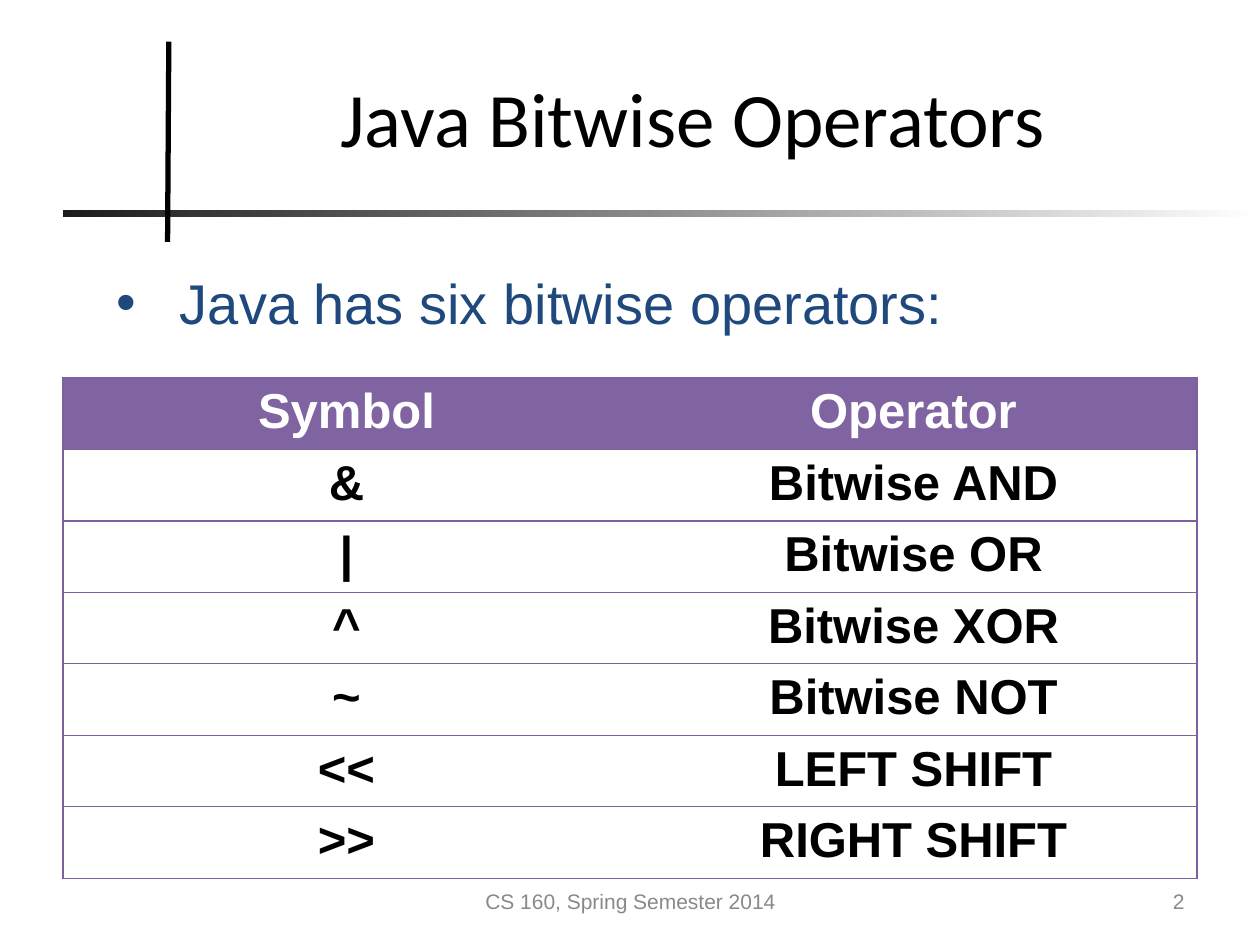
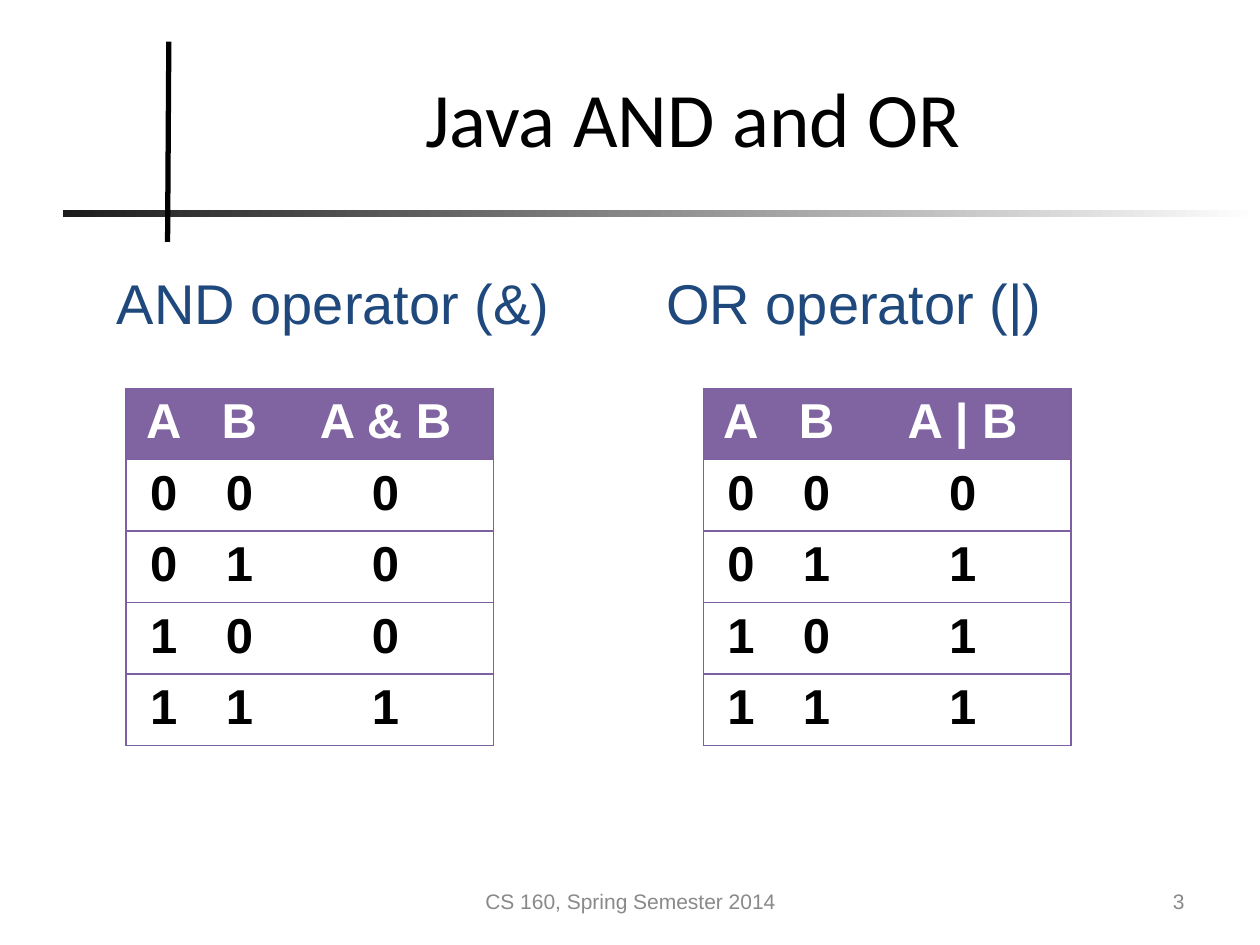
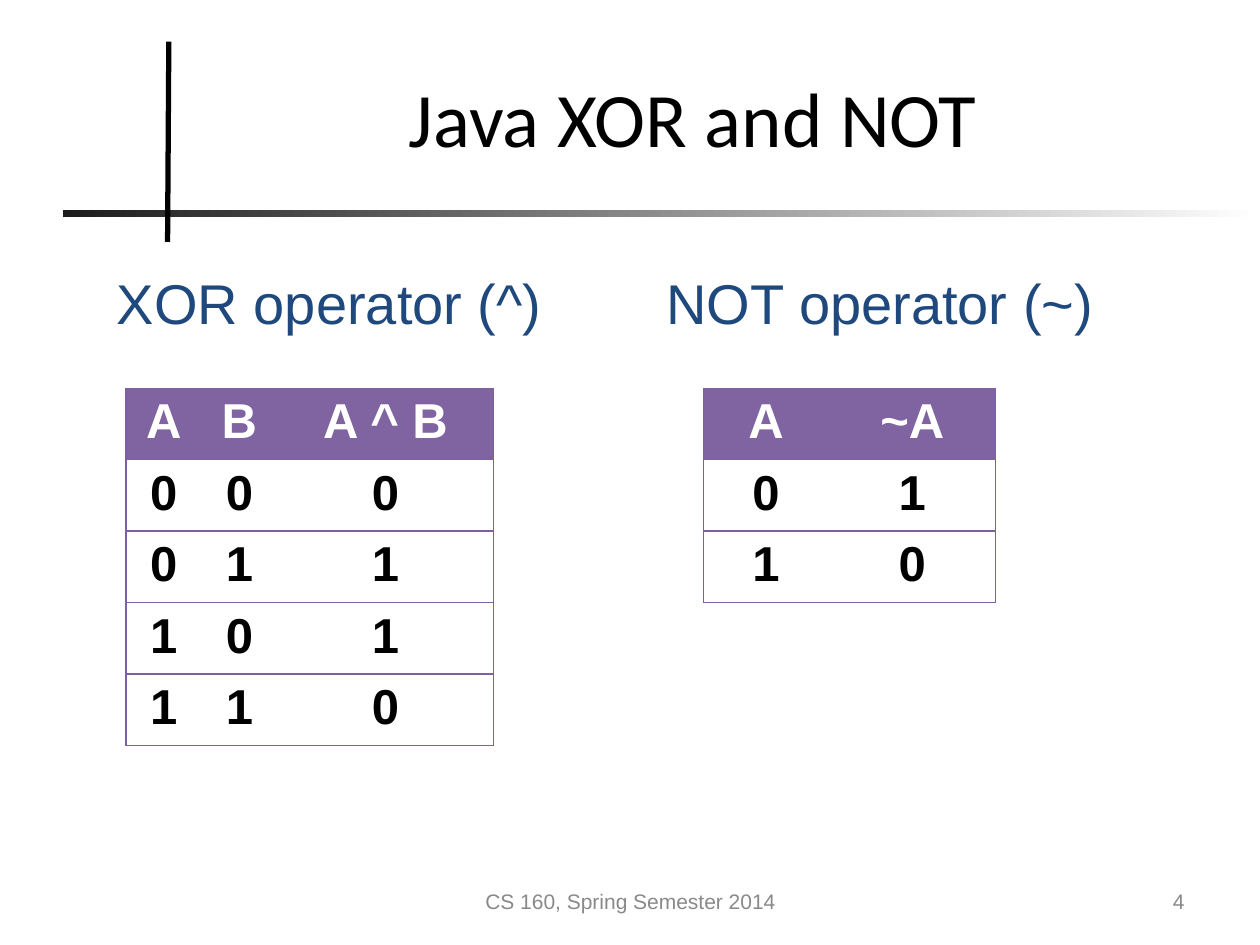
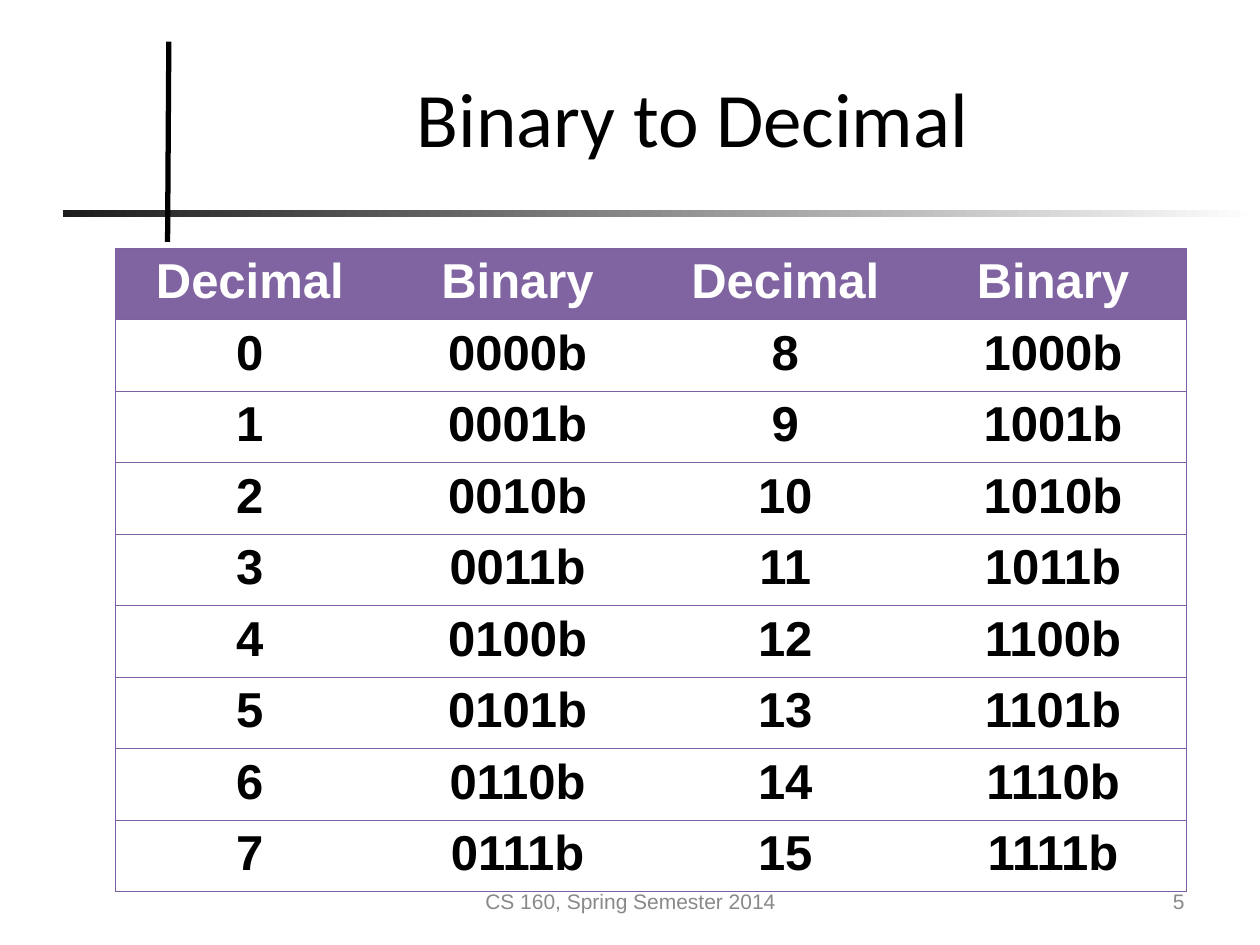
"""Build four slides on the Java bitwise operators."""
from dataclasses import dataclass
from typing import Any

from lxml.etree import SubElement
from pptx import Presentation
from pptx.dml.color import RGBColor
from pptx.enum.shapes import MSO_CONNECTOR, MSO_SHAPE
from pptx.enum.text import MSO_ANCHOR, MSO_AUTO_SIZE, PP_ALIGN
from pptx.oxml.ns import qn
from pptx.slide import Slide
from pptx.table import _Cell
from pptx.text.text import _Paragraph
from pptx.util import Inches, Pt

BLACK = RGBColor(0x00, 0x00, 0x00)
WHITE = RGBColor(0xFF, 0xFF, 0xFF)
CHARCOAL = RGBColor(0x1C, 0x1C, 0x1C)
GRAY = RGBColor(0x89, 0x89, 0x89)
NAVY = RGBColor(0x1F, 0x49, 0x7D)
HEADER_PURPLE = RGBColor(0x80, 0x64, 0xA2)
BORDER_PURPLE = RGBColor(0x7D, 0x60, 0xA0)

FOOTER = "CS 160, Spring Semester 2014"
FIRST_NUMBER = 2


@dataclass(frozen=True)
class TextStyle:
    """Font, colour and placement of a paragraph."""

    font: dict[str, Any]
    color: RGBColor
    alignment: PP_ALIGN = PP_ALIGN.LEFT


@dataclass(frozen=True)
class Box:
    """Place and size in inches."""

    left: float
    top: float
    width: float
    height: float

    def lengths(self) -> list[Inches]:
        """Give the four values as lengths."""
        return [Inches(value) for value in (self.left, self.top, self.width, self.height)]


@dataclass(frozen=True)
class Grid:
    """Table with a header row."""

    left: float
    top: float
    height: float
    columns: list[float]
    rows: list[list[str]]


@dataclass(frozen=True)
class Page:
    """Content of one slide."""

    title: str
    grids: list[Grid]
    heading: str = ""
    heading_width: float = 8.17
    bulleted: bool = False


TITLE_STYLE = TextStyle({"name": "Calibri", "size": Pt(44)}, BLACK, PP_ALIGN.CENTER)
HEADING_STYLE = TextStyle({"name": "Arial", "size": Pt(32)}, NAVY)
CELL_FONT = {"name": "Arial", "size": Pt(28), "bold": True}
HEADER_STYLE = TextStyle(CELL_FONT, WHITE, PP_ALIGN.CENTER)
BODY_STYLE = TextStyle(CELL_FONT, BLACK, PP_ALIGN.CENTER)
SMALL_FONT = {"name": "Arial", "size": Pt(12)}
FOOTER_STYLE = TextStyle(SMALL_FONT, GRAY, PP_ALIGN.CENTER)
NUMBER_STYLE = TextStyle(SMALL_FONT, GRAY, PP_ALIGN.RIGHT)


def style_paragraph(paragraph: _Paragraph, text: str, style: TextStyle) -> None:
    """Write text in the given style."""
    run = paragraph.add_run()
    run.text = text
    paragraph.alignment = style.alignment
    for name, value in style.font.items():
        setattr(run.font, name, value)
    run.font.color.rgb = style.color


def add_text(slide: Slide, box: Box, text: str, style: TextStyle,
             anchor: MSO_ANCHOR = MSO_ANCHOR.MIDDLE) -> _Paragraph:
    """Add a wrapped text box and return its paragraph."""
    frame = slide.shapes.add_textbox(*box.lengths()).text_frame
    frame.word_wrap = True
    frame.vertical_anchor = anchor
    paragraph = frame.paragraphs[0]
    style_paragraph(paragraph, text, style)
    return paragraph


def add_heading(slide: Slide, page: Page) -> None:
    """Add the heading with a bullet or with a tab between its two halves."""
    paragraph = add_text(slide, Box(0.83, 2.08, page.heading_width, 0.64),
                         page.heading, HEADING_STYLE, MSO_ANCHOR.TOP)
    properties = paragraph._p.get_or_add_pPr()
    if page.bulleted:
        properties.set("marL", str(Inches(0.5)))
        properties.set("indent", str(Inches(-0.5)))
        SubElement(properties, qn("a:buFont"), typeface="Arial")
        SubElement(properties, qn("a:buChar"), char="•")
    else:
        tabs = SubElement(properties, qn("a:tabLst"))
        SubElement(tabs, qn("a:tab"), pos=str(Inches(4.36)), algn="l")


def add_frame(slide: Slide, title: str, number: int) -> None:
    """Add the crossed rules, title, footer and slide number."""
    rule = slide.shapes.add_shape(MSO_SHAPE.RECTANGLE, *Box(0.5, 1.67, 9.5, 0.05).lengths())
    rule.shadow.inherit = False
    rule.line.fill.background()
    rule.fill.gradient()
    rule.fill.gradient_angle = 0
    for stop, color in zip(rule.fill.gradient_stops, (CHARCOAL, WHITE)):
        stop.color.rgb = color
    upright = slide.shapes.add_connector(
        MSO_CONNECTOR.STRAIGHT, Inches(1.33), Inches(1.92), Inches(1.34), Inches(0.33))
    upright.line.color.rgb = BLACK
    upright.line.width = Pt(3)
    SubElement(upright._element.spPr, qn("a:effectLst"))
    add_text(slide, Box(1.5, 0.3, 8, 1.25), title, TITLE_STYLE)
    add_text(slide, Box(3.42, 6.95, 3.17, 0.4), FOOTER, FOOTER_STYLE)
    add_text(slide, Box(7.17, 6.95, 2.33, 0.4), str(number), NUMBER_STYLE)


def set_borders(cell: _Cell, visible: dict[str, bool]) -> None:
    """Draw the visible sides of a cell and clear the others."""
    properties = cell._tc.get_or_add_tcPr()
    for side, shown in visible.items():
        line = SubElement(properties, qn(f"a:ln{side}"), w=str(Pt(0.75)))
        if shown:
            fill = SubElement(line, qn("a:solidFill"))
            SubElement(fill, qn("a:srgbClr"), val=str(BORDER_PURPLE))
        else:
            SubElement(line, qn("a:noFill"))


def add_grid(slide: Slide, grid: Grid) -> None:
    """Add a table with a purple header and horizontal rules."""
    last = len(grid.columns) - 1
    box = Box(grid.left, grid.top, sum(grid.columns), grid.height)
    table = slide.shapes.add_table(len(grid.rows), last + 1, *box.lengths()).table
    table.horz_banding = False
    for column, width in zip(table.columns, grid.columns):
        column.width = Inches(width)
    for row_index, row in enumerate(grid.rows):
        for column_index, text in enumerate(row):
            cell = table.cell(row_index, column_index)
            set_borders(cell, {"L": column_index == 0, "R": column_index == last,
                               "T": True, "B": True})
            if row_index == 0:
                cell.fill.solid()
                cell.fill.fore_color.rgb = HEADER_PURPLE
            else:
                cell.fill.background()
            style = BODY_STYLE if row_index else HEADER_STYLE
            style_paragraph(cell.text_frame.paragraphs[0], text, style)


def truth_grid(left: float, symbol: str, results: str) -> Grid:
    """Describe the truth table of a two-operand operator."""
    rows = [[*f"{index:02b}", result] for index, result in enumerate(results)]
    return Grid(left, 3.08, 2.83, [0.6, 0.6, 1.72], [["A", "B", f"A {symbol} B"], *rows])


OPERATORS = [
    ["Symbol", "Operator"],
    ["&", "Bitwise AND"],
    ["|", "Bitwise OR"],
    ["^", "Bitwise XOR"],
    ["~", "Bitwise NOT"],
    ["<<", "LEFT SHIFT"],
    [">>", "RIGHT SHIFT"],
]
CONVERSIONS = [["Decimal", "Binary"] * 2] + [
    [str(low), f"{low:04b}b", str(low + 8), f"{low + 8:04b}b"] for low in range(8)
]
NOT_GRID = Grid(5.58, 3.08, 1.7, [1, 1.32], [["A", "~A"], ["0", "1"], ["1", "0"]])

PAGES = [
    Page("Java Bitwise Operators", [Grid(0.5, 3, 3.97, [4.5, 4.5], OPERATORS)],
         "Java has six bitwise operators:", heading_width=7, bulleted=True),
    Page("Java AND and OR", [truth_grid(1, "&", "0001"), truth_grid(5.58, "|", "0111")],
         "AND operator (&)\tOR operator (|)"),
    Page("Java XOR and NOT", [truth_grid(1, "^", "0110"), NOT_GRID],
         "XOR operator (^)\tNOT operator (~)"),
    Page("Binary to Decimal", [Grid(0.92, 1.97, 5.1, [8.5 / 4] * 4, CONVERSIONS)]),
]


def main() -> None:
    """Build and save the presentation."""
    presentation = Presentation()
    presentation.slide_width = Inches(10)
    presentation.slide_height = Inches(7.5)
    for number, page in enumerate(PAGES, FIRST_NUMBER):
        slide = presentation.slides.add_slide(presentation.slide_layouts[6])
        add_frame(slide, page.title, number)
        for grid in page.grids:
            add_grid(slide, grid)
        if page.heading:
            add_heading(slide, page)
    presentation.save("out.pptx")


if __name__ == "__main__":
    main()
